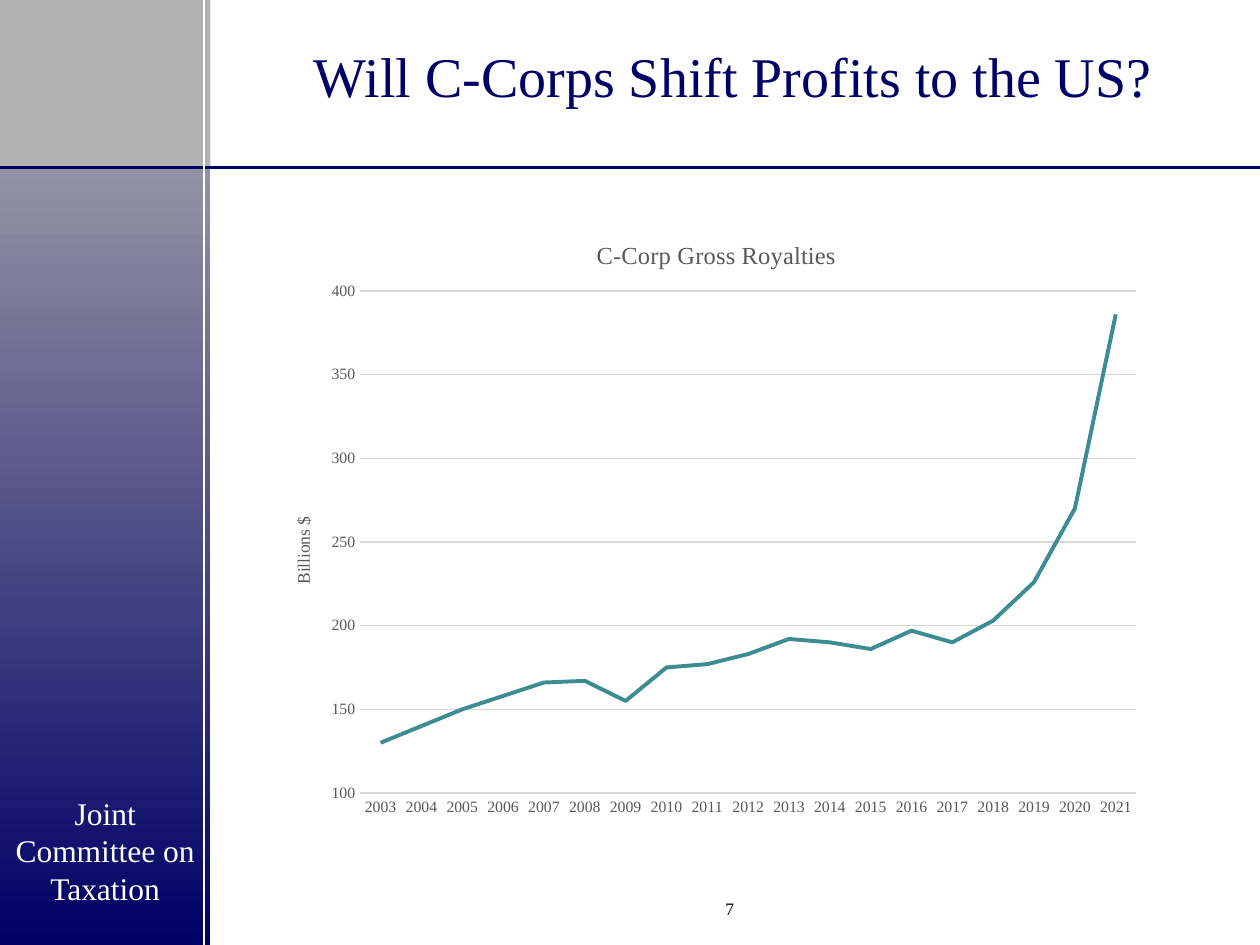
"""Build the slide on C-Corp gross royalties."""
from dataclasses import dataclass

from lxml import etree
from pptx import Presentation
from pptx.chart.data import CategoryChartData
from pptx.dml.color import RGBColor
from pptx.enum.chart import XL_CHART_TYPE, XL_MARKER_STYLE, XL_TICK_MARK
from pptx.enum.shapes import MSO_CONNECTOR, MSO_SHAPE
from pptx.enum.text import MSO_ANCHOR, PP_ALIGN
from pptx.oxml.ns import qn
from pptx.util import Inches, Pt

LINE_CHART = XL_CHART_TYPE.LINE
NO_MARKER = XL_MARKER_STYLE.NONE
NO_TICK = XL_TICK_MARK.NONE
STRAIGHT = MSO_CONNECTOR.STRAIGHT
RECTANGLE = MSO_SHAPE.RECTANGLE
MIDDLE = MSO_ANCHOR.MIDDLE
LEFT, CENTER = PP_ALIGN.LEFT, PP_ALIGN.CENTER

WHITE = RGBColor(0xFF, 0xFF, 0xFF)
BLACK = RGBColor(0x00, 0x00, 0x00)
NAVY = RGBColor(0x00, 0x00, 0x66)
SILVER = RGBColor(0xB2, 0xB2, 0xB2)
GRID_GRAY = RGBColor(0xD9, 0xD9, 0xD9)
TEXT_GRAY = RGBColor(0x59, 0x59, 0x59)
TEAL = RGBColor(0x3C, 0x8C, 0x93)

FONT = "Times New Roman"
SIDEBAR_WIDTH = 1.67
RULE_TOP = 1.33
FIRST_YEAR = 2003
ROYALTIES = (130, 140, 150, 158, 166, 167, 155, 175, 177, 183,
             192, 190, 186, 197, 190, 203, 226, 270, 386)


@dataclass(frozen=True)
class Panel:
    height: float
    colors: tuple


@dataclass(frozen=True)
class Rule:
    start: tuple
    end: tuple
    color: RGBColor
    width: float


@dataclass(frozen=True)
class Label:
    text: str
    box: tuple
    size: int
    color: RGBColor
    align: PP_ALIGN
    wrap: bool


PANELS = (Panel(7.5, (SILVER, NAVY)), Panel(RULE_TOP, (SILVER,)))
RULES = (
    Rule((0, RULE_TOP), (10, RULE_TOP), NAVY, 1.5),
    Rule((1.62, 0), (1.62, 7.5), WHITE, 0.75),
)
LABELS = (
    Label("Joint Committee on Taxation", (0, 6.25, SIDEBAR_WIDTH, 1), 18, WHITE, CENTER, True),
    Label("7", (5.66, 7.08, 0.37, 0.27), 10, BLACK, LEFT, False),
)


def set_attributes(target, values: dict) -> None:
    for name, value in values.items():
        setattr(target, name, value)


def style_font(font, size: float, color: RGBColor) -> None:
    set_attributes(font, {"name": FONT, "size": Pt(size), "bold": False})
    font.color.rgb = color


def style_line(line, color: RGBColor, width: float) -> None:
    line.color.rgb = color
    line.width = Pt(width)


def draw_panel(slide, panel: Panel) -> None:
    shape = slide.shapes.add_shape(
        RECTANGLE, 0, 0, Inches(SIDEBAR_WIDTH), Inches(panel.height))
    shape.shadow.inherit = False
    shape.line.fill.background()
    if len(panel.colors) == 1:
        shape.fill.solid()
        shape.fill.fore_color.rgb = panel.colors[0]
        return
    shape.fill.gradient()
    shape.fill.gradient_angle = 270
    for stop, color in zip(shape.fill.gradient_stops, panel.colors):
        stop.color.rgb = color


def draw_rule(slide, rule: Rule) -> None:
    ends = [Inches(value) for value in rule.start + rule.end]
    connector = slide.shapes.add_connector(STRAIGHT, *ends)
    style_line(connector.line, rule.color, rule.width)
    etree.SubElement(connector._element.spPr, qn("a:effectLst"))


def draw_label(slide, label: Label) -> None:
    frame = slide.shapes.add_textbox(*map(Inches, label.box)).text_frame
    frame.word_wrap = label.wrap
    paragraph = frame.paragraphs[0]
    paragraph.text = label.text
    paragraph.alignment = label.align
    style_font(paragraph.font, label.size, label.color)


def write_title(slide, text: str) -> None:
    title = slide.shapes.title
    box = {"left": 1.79, "top": 0.2, "width": 8.06, "height": 0.8}
    set_attributes(title, {side: Inches(value) for side, value in box.items()})
    title.text_frame.text = text
    set_attributes(title.text_frame, {"vertical_anchor": MIDDLE, "word_wrap": True})
    paragraph = title.text_frame.paragraphs[0]
    paragraph.alignment = CENTER
    style_font(paragraph.font, 32, NAVY)


def place_in_chart(element, **fractions: float) -> None:
    for old_layout in element.findall(qn("c:layout")):
        element.remove(old_layout)
    layout = etree.Element(qn("c:layout"))
    manual = etree.SubElement(layout, qn("c:manualLayout"))
    values = {"xMode": "edge", "yMode": "edge", **fractions}
    if "w" in fractions:
        values = {"layoutTarget": "inner", **values}
    for tag, value in values.items():
        etree.SubElement(manual, qn(f"c:{tag}")).set("val", str(value))
    element.insert(0 if element.find(qn("c:tx")) is None else 1, layout)


def write_chart_title(title, text: str, size: float, x: float, y: float) -> None:
    title.text_frame.text = text
    style_font(title.text_frame.paragraphs[0].font, size, TEXT_GRAY)
    place_in_chart(title._element, x=x, y=y)


def draw_royalties(slide) -> None:
    data = CategoryChartData()
    data.categories = [str(FIRST_YEAR + i) for i in range(len(ROYALTIES))]
    data.add_series("Series 1", ROYALTIES)
    box = map(Inches, (2.08, 1.67, 7.08, 4.92))
    chart = slide.shapes.add_chart(LINE_CHART, *box, data).chart
    style_font(chart.font, 10, BLACK)
    set_attributes(chart, {"has_legend": False, "has_title": True})
    write_chart_title(chart.chart_title, "C-Corp Gross Royalties", 14, 0.37, 0.04)

    years, billions = chart.category_axis, chart.value_axis
    ticks = {"major_tick_mark": NO_TICK, "minor_tick_mark": NO_TICK}
    for axis in (years, billions):
        set_attributes(axis, ticks)
        style_font(axis.tick_labels.font, 9, TEXT_GRAY)
    years.has_major_gridlines = False
    style_line(years.format.line, GRID_GRAY, 0.75)
    set_attributes(billions, {"minimum_scale": 100, "maximum_scale": 400, "major_unit": 50,
                              "has_major_gridlines": True, "has_title": True})
    billions.format.line.fill.background()
    style_line(billions.major_gridlines.format.line, GRID_GRAY, 0.75)
    write_chart_title(billions.axis_title, "Billions $", 10, 0.03, 0.49)

    plot = chart.plots[0]
    plot.vary_by_categories = False
    royalties = plot.series[0]
    royalties.smooth = False
    royalties.marker.style = NO_MARKER
    style_line(royalties.format.line, TEAL, 2.25)
    plot_area = chart._chartSpace.chart.plotArea
    place_in_chart(plot_area, x=0.11, y=0.13, w=0.87, h=0.81)


def main() -> None:
    deck = Presentation()
    set_attributes(deck, {"slide_width": Inches(10), "slide_height": Inches(7.5)})
    slide = deck.slides.add_slide(deck.slide_layouts[5])
    for panel in PANELS:
        draw_panel(slide, panel)
    for rule in RULES:
        draw_rule(slide, rule)
    for label in LABELS:
        draw_label(slide, label)
    write_title(slide, "Will C-Corps Shift Profits to the US?")
    draw_royalties(slide)
    deck.save("out.pptx")


if __name__ == "__main__":
    main()
